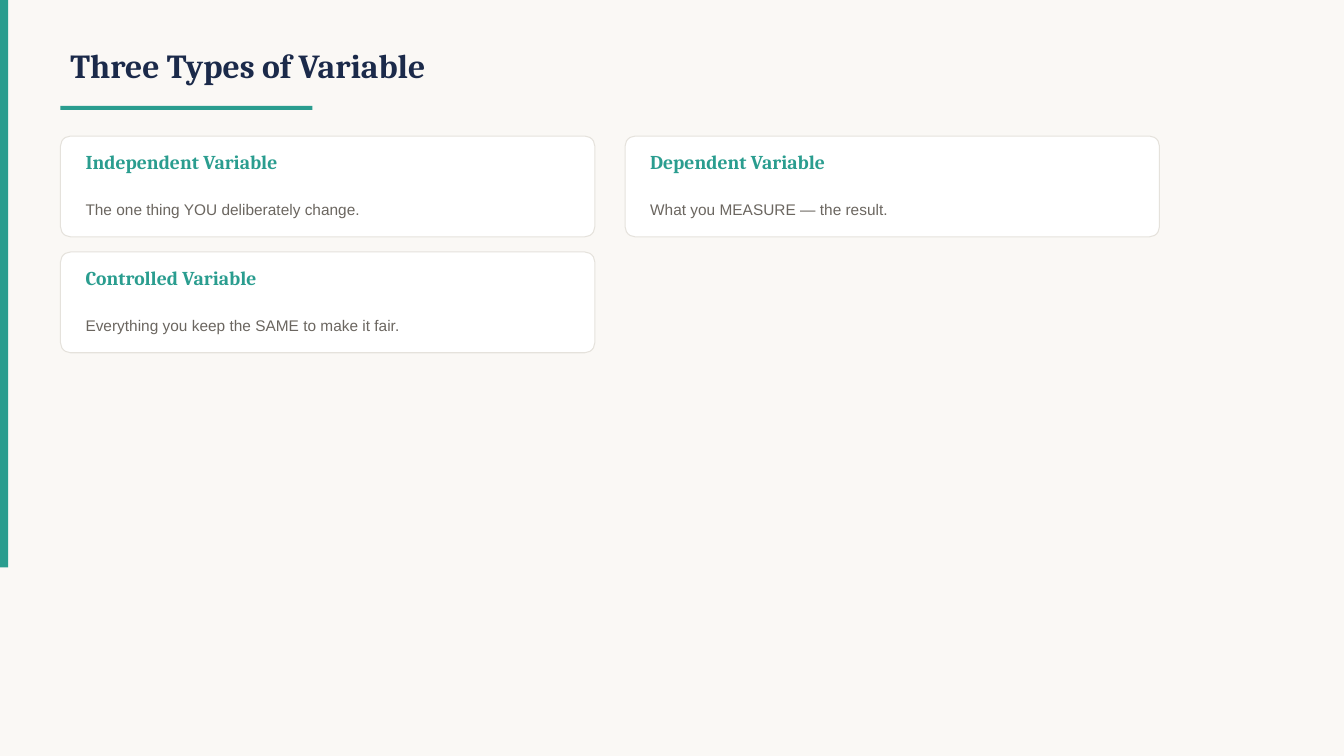
from pptx import Presentation
from pptx.dml.color import RGBColor
from pptx.enum.shapes import MSO_SHAPE as Kind
from pptx.enum.text import MSO_ANCHOR as Anchor
from pptx.util import Pt

PX = 9144  # EMU per px, 100 px to the inch
COLORS = {
    "paper": "FAF8F5",
    "teal": "2A9D8F",
    "navy": "1B2A4A",
    "white": "FFFFFF",
    "edge": "E5E2DC",
    "gray": "6B6660",
}
CARDS = [
    ("Independent Variable", "The one thing YOU deliberately change."),
    ("Dependent Variable", "What you MEASURE — the result."),
    ("Controlled Variable", "Everything you keep the SAME to make it fair."),
]


def color(name):
    return RGBColor.from_string(COLORS[name])


def scale(*sizes):
    return [size * PX for size in sizes]


def add_box(slide, box, fill, kind=Kind.RECTANGLE):
    shape = slide.shapes.add_shape(kind, *scale(*box))
    shape.shadow.inherit = False
    shape.fill.solid()
    shape.fill.fore_color.rgb = color(fill)
    shape.line.fill.background()
    return shape


def add_text(slide, box, text, size, face, ink, bold=False, space=None):
    frame = slide.shapes.add_textbox(*scale(*box)).text_frame
    frame.word_wrap = True
    frame.vertical_anchor = Anchor.MIDDLE
    para = frame.paragraphs[0]
    if space:
        para.line_spacing = space
    run = para.add_run()
    run.text = text
    font = run.font
    font.size = Pt(size)
    font.name = face
    font.bold = bold
    font.color.rgb = color(ink)


def add_card(slide, left, top, title, body):
    card = add_box(slide, (left, top, 530, 100), "white", Kind.ROUNDED_RECTANGLE)
    card.adjustments[0] = 0.1
    card.line.color.rgb = color("edge")
    card.line.width = Pt(0.75)
    add_text(slide, (left + 15, top + 8, 500, 35), title, 14, "Cambria", "teal", bold=True)
    add_text(slide, (left + 15, top + 45, 500, 50), body, 11, "Arial", "gray", space=1.3)


def main():
    deck = Presentation()
    deck.slide_width, deck.slide_height = scale(1333, 750)
    slide = deck.slides.add_slide(deck.slide_layouts[6])
    slide.background.fill.solid()
    slide.background.fill.fore_color.rgb = color("paper")

    add_box(slide, (0, 0, 8, 563), "teal")
    add_text(slide, (60, 30, 1000, 70), "Three Types of Variable", 24, "Cambria", "navy", bold=True)
    add_box(slide, (60, 105, 250, 4), "teal")
    for index, (title, body) in enumerate(CARDS):
        row, col = divmod(index, 2)
        add_card(slide, 60 + 560 * col, 135 + 115 * row, title, body)
    deck.save("out.pptx")


if __name__ == "__main__":
    main()
